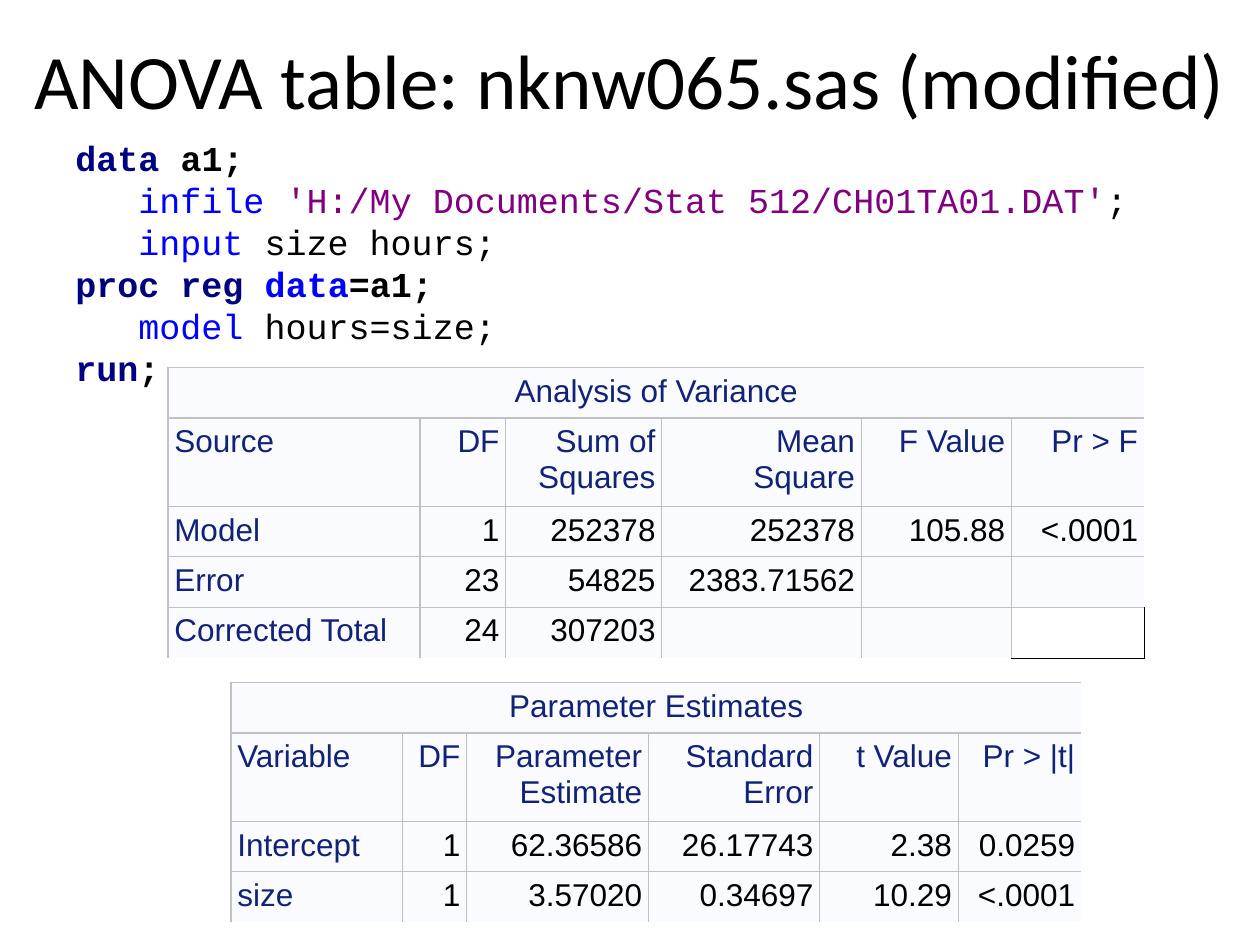
"""Builds a slide with regression code, its ANOVA table and its parameter estimates."""
from lxml.etree import SubElement
from pptx import Presentation
from pptx.dml.color import RGBColor
from pptx.enum.text import MSO_ANCHOR, PP_ALIGN
from pptx.oxml.ns import qn
from pptx.util import Pt

NO_GRID = "{2D5ABB26-0587-4C30-8999-92F81FD0307C}"
BLACK, NAVY, BLUE, PURPLE = "000000", "000080", "0000FF", "800080"
HEADING, PANEL, RULE = "112277", "FAFBFE", "C1C1C1"


def rgb(value):
    return RGBColor.from_string(value)


def assign(target, values):
    for name, value in values.items():
        setattr(target, name, value)


class RegressionSlide:
    title_font = {"name": "Calibri", "size": Pt(44), "bold": False}
    code_font = {"name": "Courier New", "size": Pt(20)}
    table_font = {"name": "Arial", "size": Pt(18), "bold": False}
    code_frame = {"word_wrap": True, "vertical_anchor": MSO_ANCHOR.TOP, "margin_top": Pt(6)}
    cell_format = {"margin_left": Pt(3.6), "margin_right": Pt(3.6),
                   "margin_top": Pt(3.6), "margin_bottom": Pt(3.6)}

    def __init__(self, deck):
        self.slide = deck.slides.add_slide(deck.slide_layouts[5])

    def style(self, run, font, color):
        assign(run.font, font)
        run.font.color.rgb = rgb(color)

    def title(self, wording, left, top, width, height):
        heading = self.slide.shapes.title
        assign(heading, {"left": Pt(left), "top": Pt(top), "width": Pt(width), "height": Pt(height)})
        assign(heading.text_frame, {"text": wording, "word_wrap": True,
                                    "vertical_anchor": MSO_ANCHOR.MIDDLE})
        paragraph = heading.text_frame.paragraphs[0]
        paragraph.alignment = PP_ALIGN.CENTER
        self.style(paragraph.runs[0], self.title_font, BLACK)

    def code(self, statements, left, top, width, height):
        frame = self.slide.shapes.add_textbox(Pt(left), Pt(top), Pt(width), Pt(height)).text_frame
        assign(frame, self.code_frame)
        for number, (nested, tokens) in enumerate(statements):
            line = frame.add_paragraph() if number else frame.paragraphs[0]
            line.line_spacing = Pt(24)
            properties = line._p.get_or_add_pPr()
            properties.set("marL", str(Pt(63 if nested else 27)))
            properties.set("indent", str(Pt(-27)))
            for wording, color in tokens:
                run = line.add_run()
                run.text = wording
                self.style(run, {**self.code_font, "bold": not nested}, color)

    def border(self, cell, sides, color):
        properties = cell._tc.get_or_add_tcPr()
        for position, side in enumerate(sides):
            edge = properties.makeelement(qn(f"a:ln{side}"), {"w": str(Pt(0.75))})
            fill = SubElement(edge, qn("a:solidFill"))
            SubElement(fill, qn("a:srgbClr"), val=color)
            properties.insert(position, edge)

    def fill_cell(self, cell, wording, alignment, color):
        assign(cell, self.cell_format)
        cell.text = wording
        cell.fill.solid()
        cell.fill.fore_color.rgb = rgb(PANEL)
        paragraph = cell.text_frame.paragraphs[0]
        paragraph.alignment = alignment
        assign(paragraph.font, self.table_font)
        for run in paragraph.runs:
            self.style(run, self.table_font, color)
        self.border(cell, "T" if cell.is_spanned else "LT", RULE)

    def table(self, caption, records, left, top, widths, heights):
        grid = self.slide.shapes.add_table(
            len(heights), len(widths), Pt(left), Pt(top), Pt(sum(widths)), Pt(sum(heights)))
        grid._element.find(f".//{qn('a:tableStyleId')}").text = NO_GRID
        results = grid.table
        assign(results, {"first_row": False, "horz_banding": False})
        for column, width in zip(results.columns, widths):
            column.width = Pt(width)
        for row, height in zip(results.rows, heights):
            row.height = Pt(height)
        results.cell(0, 0).merge(results.cell(0, len(widths) - 1))
        captions = [caption] + [""] * (len(widths) - 1)
        for r, record in enumerate([captions, *records]):
            for c, wording in enumerate(record):
                cell = results.cell(r, c)
                if wording is None:
                    cell.fill.background()
                    self.border(cell, "RB", BLACK)
                    continue
                alignment = PP_ALIGN.RIGHT if c else PP_ALIGN.LEFT
                self.fill_cell(cell, wording, alignment if r else PP_ALIGN.CENTER,
                               BLACK if r > 1 and c else HEADING)


def main():
    deck = Presentation()
    assign(deck, {"slide_width": Pt(720), "slide_height": Pt(540)})
    page = RegressionSlide(deck)
    page.title("ANOVA table: nknw065.sas (modified)", 0, 0, 720, 90)
    page.code([
        (False, [("data", NAVY), (" a1;", BLACK)]),
        (True, [("infile ", BLUE), ("'H:/My Documents/Stat 512/CH01TA01.DAT'", PURPLE), (";", BLACK)]),
        (True, [("input", BLUE), (" size hours;", BLACK)]),
        (False, [("proc reg ", NAVY), ("data", BLUE), ("=a1;", BLACK)]),
        (True, [("model", BLUE), (" hours=size;", BLACK)]),
        (False, [("run", NAVY), (";", BLACK)]),
    ], 36, 72, 684, 468)
    page.table("Analysis of Variance", [
        ["Source", "DF", "Sum of\vSquares", "Mean\vSquare", "F Value", "Pr > F"],
        ["Model", "1", "252378", "252378", "105.88", "<.0001"],
        ["Error", "23", "54825", "2383.71562", "", ""],
        ["Corrected Total", "24", "307203", "", "", None],
    ], 96, 210, [144, 49, 89.2, 114, 85.8, 76], [27.8, 48, 27.8, 27.8, 29.2])
    page.table("Parameter Estimates", [
        ["Variable", "DF", "Parameter\vEstimate", "Standard\vError", "t Value", "Pr > |t|"],
        ["Intercept", "1", "62.36586", "26.17743", "2.38", "0.0259"],
        ["size", "1", "3.57020", "0.34697", "10.29", "<.0001"],
    ], 132, 390, [98, 36.6, 104, 97.8, 79.2, 70.4], [27.8, 48, 27.8, 27.8])
    deck.save("out.pptx")


if __name__ == "__main__":
    main()
